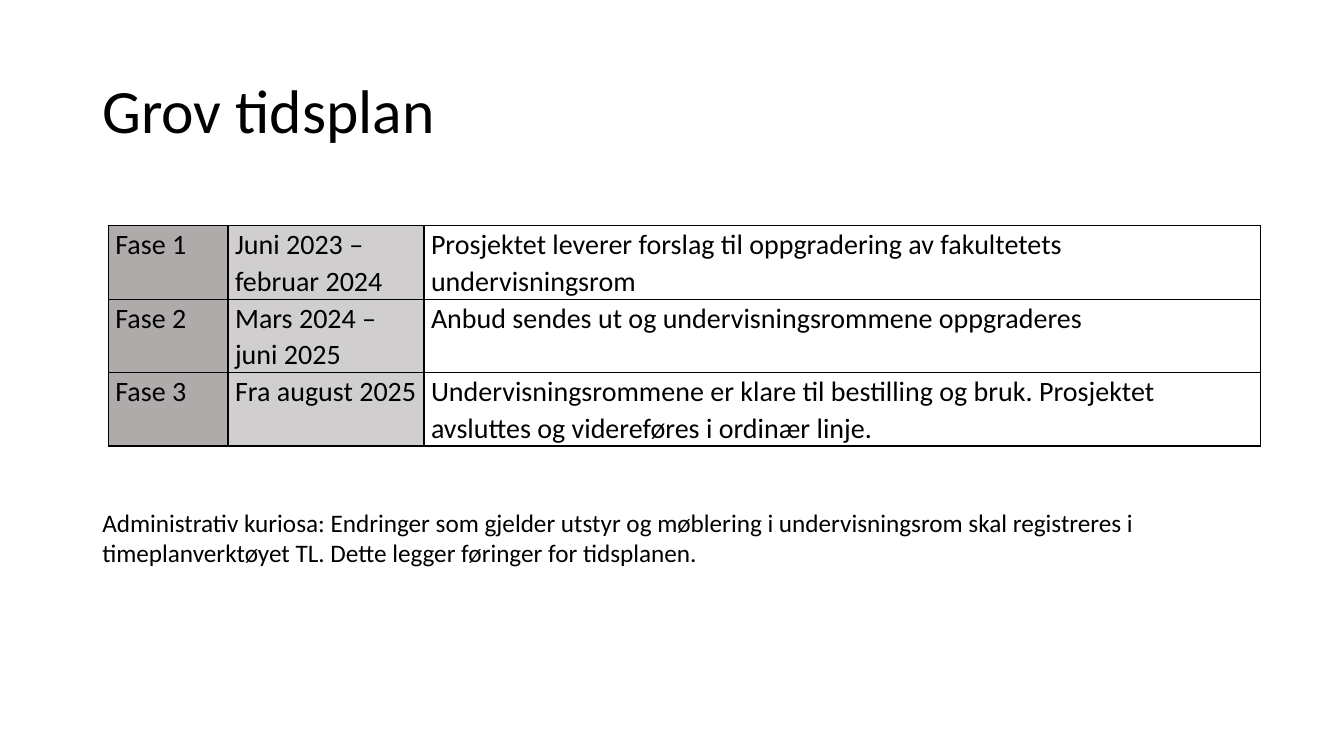
import pptx
import pptx.util
import pptx.dml.color
import pptx.enum.text
import pptx.oxml

Pt = pptx.util.Pt
RGB = pptx.dml.color.RGBColor.from_string
PP_ALIGN = pptx.enum.text.PP_ALIGN
MSO_ANCHOR = pptx.enum.text.MSO_ANCHOR

FONT = "Calibri"
COLORS = {"text": "000000", "border": "000000", "phase": "AFABAB", "period": "D0CECE"}
COLUMN_FILLS = ["phase", "period", None]
COLUMN_WIDTHS = [85.5, 140, 597.5]
PHASES = [
    ("Fase 1", "Juni 2023 – februar 2024",
     "Prosjektet leverer forslag til oppgradering av fakultetets undervisningsrom"),
    ("Fase 2", "Mars 2024 – juni 2025",
     "Anbud sendes ut og undervisningsrommene oppgraderes"),
    ("Fase 3", "Fra august 2025",
     "Undervisningsrommene er klare til bestilling og bruk. "
     "Prosjektet avsluttes og videreføres i ordinær linje."),
]
NOTE = ("Administrativ kuriosa: Endringer som gjelder utstyr og møblering i undervisningsrom "
        "skal registreres i timeplanverktøyet TL. Dette legger føringer for tidsplanen.")


def set_text(tf, text, size, line_spacing=1.0, space_after=0):
    tf.word_wrap = True
    p = tf.paragraphs[0]
    p.text = text
    p.alignment = PP_ALIGN.LEFT
    p.line_spacing = line_spacing
    p.space_after = Pt(space_after)
    p.font.name = FONT
    p.font.size = Pt(size)
    p.font.bold = False
    p.font.color.rgb = RGB(COLORS["text"])


def set_borders(cell, width=1):
    """Draw all four edges; lines must come before the fill in tcPr."""
    tc_pr = cell._tc.get_or_add_tcPr()
    for i, edge in enumerate(("lnL", "lnR", "lnT", "lnB")):
        tc_pr.insert(i, pptx.oxml.parse_xml(
            f'<a:{edge} xmlns:a="http://schemas.openxmlformats.org/drawingml/2006/main" '
            f'w="{Pt(width)}"><a:solidFill><a:srgbClr val="{COLORS["border"]}"/>'
            f'</a:solidFill></a:{edge}>'))


def add_title(slide, text, x, y, w, h):
    sp = slide.shapes.title
    sp.left, sp.top, sp.width, sp.height = Pt(x), Pt(y), Pt(w), Pt(h)
    set_text(sp.text_frame, text, 44, 0.9)
    sp.text_frame.vertical_anchor = MSO_ANCHOR.MIDDLE


def add_schedule(slide, x, y, w, h):
    table = slide.shapes.add_table(
        len(PHASES), len(COLUMN_WIDTHS), Pt(x), Pt(y), Pt(w), Pt(h)).table
    table.first_row = table.horz_banding = False
    for column, width in zip(table.columns, COLUMN_WIDTHS):
        column.width = Pt(width)
    for row, phase in enumerate(PHASES):
        for col, (text, fill) in enumerate(zip(phase, COLUMN_FILLS)):
            cell = table.cell(row, col)
            cell.margin_left = cell.margin_right = Pt(5)
            cell.margin_top = cell.margin_bottom = 0
            set_text(cell.text_frame, text, 20, 1.07, 8)
            if fill:
                cell.fill.solid()
                cell.fill.fore_color.rgb = RGB(COLORS[fill])
            else:
                cell.fill.background()
            set_borders(cell)


def add_note(slide, text, x, y, w, h):
    set_text(slide.shapes.add_textbox(Pt(x), Pt(y), Pt(w), Pt(h)).text_frame, text, 18)


def main():
    prs = pptx.Presentation()
    prs.slide_width, prs.slide_height = Pt(960), Pt(540)
    s = prs.slides.add_slide(prs.slide_layouts[5])
    add_title(s, "Grov tidsplan", 66, 28.75, 828, 104.4)
    add_schedule(s, 77.4, 161.3, sum(COLUMN_WIDTHS), 156)
    add_note(s, NOTE, 66, 358.8, 845, 72.7)
    prs.save("out.pptx")


if __name__ == "__main__":
    main()
